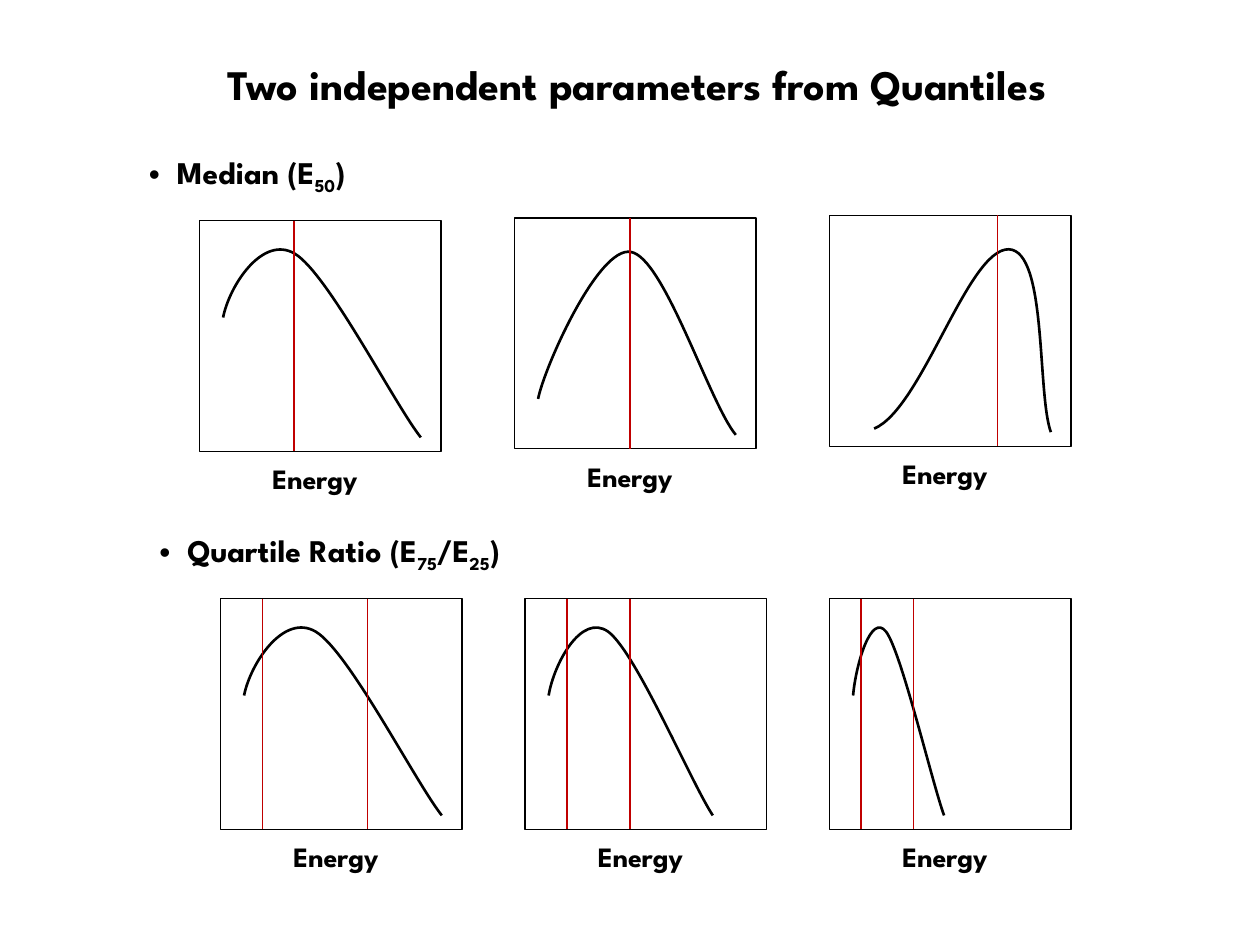
from lxml.etree import SubElement
from pptx import Presentation
from pptx.dml.color import RGBColor
from pptx.enum.shapes import MSO_CONNECTOR, MSO_SHAPE
from pptx.enum.text import MSO_AUTO_SIZE, PP_ALIGN
from pptx.oxml.ns import qn
from pptx.util import Pt

COLORS = {"ink": "000000", "quantile": "C00000"}
FONT = "League Spartan"
BOX_W, BOX_H = 138, 132

SKEWED = [(13.5, 55.5), (17, 37.5), (36, 8), (54.5, 19),
          (73.5, 30.5), (111.5, 105), (126.5, 124)]
CENTRED = [(13.5, 103.5), (17, 85.5), (48, 16), (66.5, 19.5),
           (85.5, 22.5), (111.5, 106), (126.5, 124)]
LATE = [(25.5, 122), (53, 110.5), (79, 19), (102.5, 19.5),
        (124.5, 20.5), (118.5, 101.5), (126.5, 124)]


def narrowed(curve, factor):
    x0 = curve[0][0]
    return [(x0 + (x - x0) * factor, y) for x, y in curve]


PLOTS = [
    (114, 126, SKEWED, [54]),
    (294, 124.5, CENTRED, [66]),
    (474, 123, LATE, [96]),
    (126, 342, SKEWED, [24, 84]),
    (300, 342, narrowed(SKEWED, 0.83), [24, 60]),
    (474, 342, narrowed(SKEWED, 0.46), [18, 48]),
]


def rgb(name):
    return RGBColor.from_string(COLORS[name])


def style_line(s, color, width):
    s.line.color.rgb = rgb(color)
    s.line.width = Pt(width)


def add_text(slide, box, parts, size, align=PP_ALIGN.LEFT, wrap=True):
    tf = slide.shapes.add_textbox(*map(Pt, box)).text_frame
    tf.word_wrap = wrap
    tf.auto_size = MSO_AUTO_SIZE.SHAPE_TO_FIT_TEXT
    p = tf.paragraphs[0]
    p.alignment = align
    for text, baseline in parts:
        r = p.add_run()
        r.text = text
        r.font.name = FONT
        r.font.size = Pt(size)
        r.font.bold = True
        r.font.color.rgb = rgb("ink")
        if baseline:
            r.font._element.set("baseline", str(baseline))
    return tf


def add_bullet(slide, box, parts):
    tf = add_text(slide, box, parts, 18)
    pPr = tf.paragraphs[0]._p.get_or_add_pPr()
    pPr.set("marL", str(Pt(16)))
    pPr.set("indent", str(-Pt(16)))
    SubElement(pPr, qn("a:buFont")).set("typeface", "Arial")
    SubElement(pPr, qn("a:buChar")).set("char", "•")


def add_curve(slide, left, top, curve):
    points = [(Pt(left + x), Pt(top + y)) for x, y in curve]
    builder = slide.shapes.build_freeform(*points[0])
    builder.add_line_segments(points[1:], close=False)
    s = builder.convert_to_shape()
    s.shadow.inherit = False
    s.fill.background()
    style_line(s, "ink", 1.5)
    segments = list(s._element.iter(qn("a:lnTo")))
    path = segments[0].getparent()
    for i in range(0, len(segments), 3):
        bezier = SubElement(path, qn("a:cubicBezTo"))
        for segment in segments[i:i + 3]:
            bezier.append(segment[0])
            path.remove(segment)


def add_frame(slide, left, top):
    s = slide.shapes.add_shape(MSO_SHAPE.RECTANGLE, Pt(left), Pt(top), Pt(BOX_W), Pt(BOX_H))
    s.shadow.inherit = False
    s.fill.background()
    style_line(s, "ink", 0.75)


def add_quantile(slide, x, top):
    s = slide.shapes.add_connector(MSO_CONNECTOR.STRAIGHT, Pt(x), Pt(top), Pt(x), Pt(top + BOX_H))
    style_line(s, "quantile", 0.75)
    SubElement(s._element.spPr, qn("a:effectLst"))


def add_plot(slide, left, top, curve, quantiles):
    add_curve(slide, left, top, curve)
    add_frame(slide, left, top)
    for x in quantiles:
        add_quantile(slide, left + x, top)
    tf = add_text(slide, (left + 30, top + 138, 72, 19.4), [("Energy", 0)], 16, PP_ALIGN.CENTER)
    tf.margin_left = tf.margin_right = tf.margin_top = tf.margin_bottom = 0


def main():
    prs = Presentation()
    prs.slide_width, prs.slide_height = Pt(720), Pt(540)
    slide = prs.slides.add_slide(prs.slide_layouts[6])
    add_text(slide, (96, 30, 536, 36), [("Two independent parameters from Quantiles", 0)],
             24, PP_ALIGN.CENTER, wrap=False)
    add_bullet(slide, (78, 84, 180, 29), [("Median (E", 0), ("50", -25000), (")", 0)])
    add_bullet(slide, (84, 300, 258, 29),
               [("Quartile Ratio (E", 0), ("75", -25000), ("/E", 0), ("25", -25000), (")", 0)])
    for plot in PLOTS:
        add_plot(slide, *plot)
    prs.save("out.pptx")


if __name__ == "__main__":
    main()
